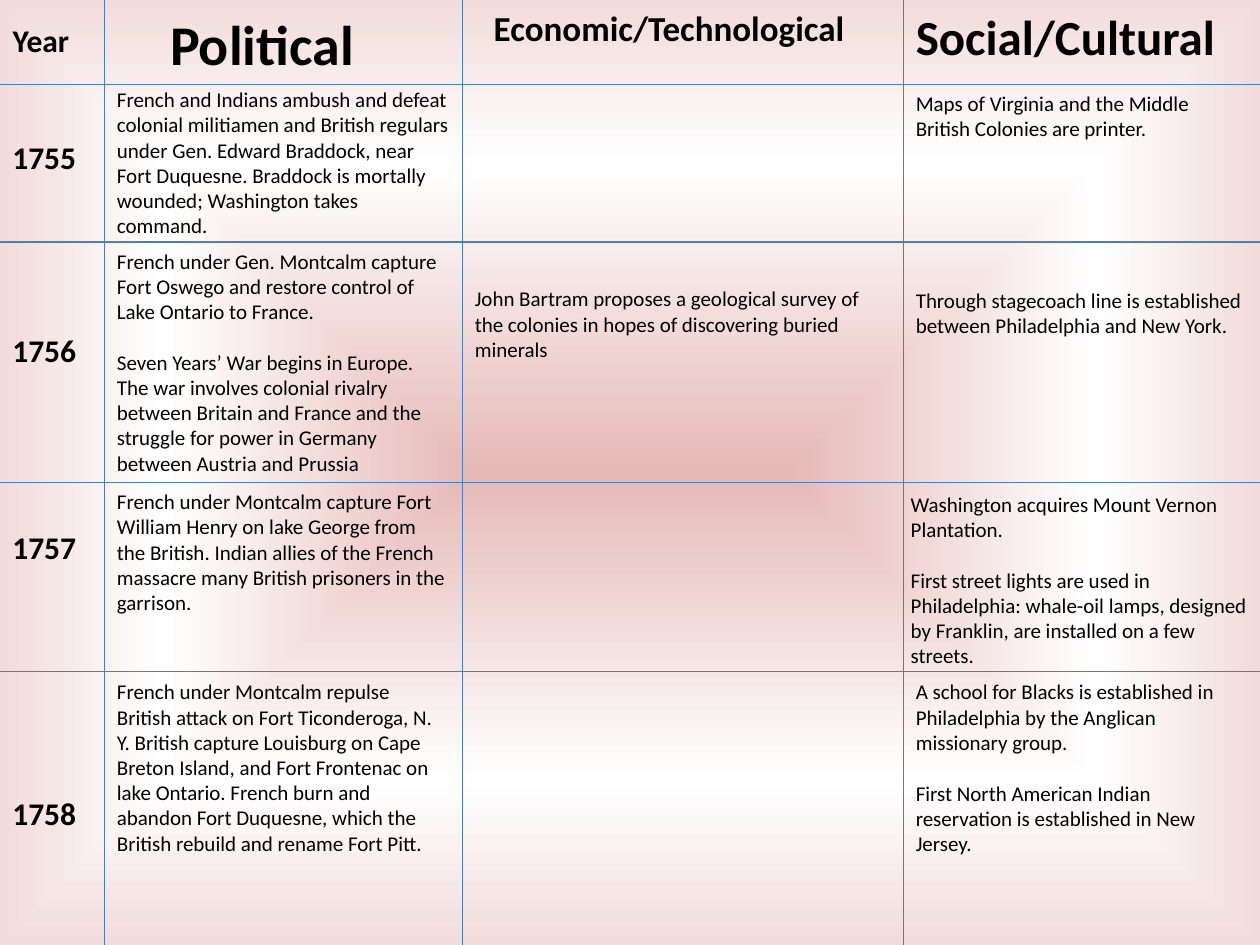
from lxml.etree import SubElement
from pptx import Presentation
from pptx.dml.color import RGBColor
from pptx.enum.shapes import MSO_CONNECTOR
from pptx.enum.text import MSO_AUTO_SIZE, PP_ALIGN
from pptx.oxml.ns import qn
from pptx.util import Inches, Pt

BLACK = RGBColor(0x00, 0x00, 0x00)
RULE_BLUE = RGBColor(0x4B, 0x7E, 0xBC)
ROSE = RGBColor(0xE6, 0xB9, 0xB8)
WHITE = RGBColor(0xFF, 0xFF, 0xFF)
PALE_ROSE = RGBColor(0xF2, 0xDC, 0xDB)

WIDTH, HEIGHT = 10, 7.5
YEAR_X, POLITICAL_X, ECONOMIC_X, SOCIAL_X = 0, 0.83, 3.67, 7.17

prs = Presentation()
prs.slide_width, prs.slide_height = Inches(WIDTH), Inches(HEIGHT)
slide = prs.slides.add_slide(prs.slide_layouts[6])


def add_rule(x1, y1, x2, y2):
    rule = slide.shapes.add_connector(
        MSO_CONNECTOR.STRAIGHT, Inches(x1), Inches(y1), Inches(x2), Inches(y2))
    rule.line.color.rgb = RULE_BLUE
    rule.line.width = Pt(0.75)
    SubElement(rule._element.spPr, qn("a:effectLst"))


def add_text(left, top, width, height, paragraphs, size, bold=False,
             align=PP_ALIGN.LEFT, wrap=True):
    frame = slide.shapes.add_textbox(
        Inches(left), Inches(top), Inches(width), Inches(height)).text_frame
    frame.word_wrap = wrap
    frame.auto_size = MSO_AUTO_SIZE.SHAPE_TO_FIT_TEXT
    for i, words in enumerate(paragraphs):
        paragraph = frame.paragraphs[0] if i == 0 else frame.add_paragraph()
        paragraph.alignment = align
        if i:
            paragraph.space_before = Pt(14.6)
        run = paragraph.add_run()
        run.text = words
        run.font.name = "Calibri"
        run.font.size = Pt(size)
        run.font.bold = bold
        run.font.color.rgb = BLACK


# Background: gradient spreading from the centre
slide.background.fill.gradient()
gradient = slide._element.find(".//" + qn("a:gradFill"))
for child in list(gradient):
    gradient.remove(child)
stops = SubElement(gradient, qn("a:gsLst"))
for position, color in ((0, ROSE), (65, WHITE), (100, PALE_ROSE)):
    stop = SubElement(stops, qn("a:gs"), pos=str(position * 1000))
    SubElement(stop, qn("a:srgbClr"), val=str(color))
spread = SubElement(gradient, qn("a:path"), path="shape")
SubElement(spread, qn("a:fillToRect"), l="50000", t="50000", r="50000", b="50000")

# Grid rules
for x in (POLITICAL_X, ECONOMIC_X, SOCIAL_X):
    add_rule(x, 0, x, HEIGHT)
for y in (0.67, 1.92, 3.83, 5.33):
    add_rule(0, y, WIDTH, y)

# Column headings
add_text(YEAR_X, 0.12, 0.65, 0.4, ["Year"], 18, True, PP_ALIGN.CENTER, wrap=False)
add_text(POLITICAL_X, 0.03, 2.5, 0.64, ["Political"], 32, True, PP_ALIGN.CENTER)
add_text(ECONOMIC_X, 0, 3.28, 0.44, ["Economic/Technological"], 20, True,
         PP_ALIGN.CENTER)
add_text(SOCIAL_X, 0, 2.83, 0.57, ["Social/Cultural"], 28, True)

# Years
for year, top in (("1755", 1.05), ("1756", 2.58), ("1757", 4.14), ("1758", 6.25)):
    add_text(YEAR_X, top, 0.83, 0.4, [year], 18, True)

# Events: left, top, width, height, paragraphs
events = [
    # 1755
    (POLITICAL_X, 0.64, 2.83, 1.3, [
        "French and Indians ambush and defeat colonial militiamen and British "
        "regulars under Gen. Edward Braddock, near Fort Duquesne. Braddock is "
        "mortally wounded; Washington takes command."]),
    (SOCIAL_X, 0.67, 2.83, 0.5, [
        "Maps of Virginia and the Middle British Colonies are printer."]),
    # 1756
    (POLITICAL_X, 1.92, 2.83, 1.9, [
        "French under Gen. Montcalm capture Fort Oswego and restore control of "
        "Lake Ontario to France.",
        "Seven Years’ War begins in Europe. The war involves colonial rivalry "
        "between Britain and France and the struggle for power in Germany "
        "between Austria and Prussia"]),
    (ECONOMIC_X, 2.22, 3.5, 0.7, [
        "John Bartram proposes a geological survey of the colonies in hopes of "
        "discovering buried minerals"]),
    (SOCIAL_X, 2.23, 2.83, 0.5, [
        "Through stagecoach line is established between Philadelphia and New York."]),
    # 1757
    (POLITICAL_X, 3.83, 2.83, 1.1, [
        "French under Montcalm capture Fort William Henry on lake George from "
        "the British. Indian allies of the French massacre many British "
        "prisoners in the garrison."]),
    (7.13, 3.85, 2.87, 1.5, [
        "Washington acquires Mount Vernon Plantation.",
        "First street lights are used in Philadelphia: whale-oil lamps, designed "
        "by Franklin, are installed on a few streets."]),
    # 1758
    (POLITICAL_X, 5.34, 2.83, 1.5, [
        "French under Montcalm repulse British attack on Fort Ticonderoga, N. Y. "
        "British capture Louisburg on Cape Breton Island, and Fort Frontenac on "
        "lake Ontario. French burn and abandon Fort Duquesne, which the British "
        "rebuild and rename Fort Pitt."]),
    (SOCIAL_X, 5.34, 2.83, 1.5, [
        "A school for Blacks is established in Philadelphia by the Anglican "
        "missionary group.",
        "First North American Indian reservation is established in New Jersey."]),
]
for left, top, width, height, paragraphs in events:
    add_text(left, top, width, height, paragraphs, 12)

prs.save("out.pptx")
